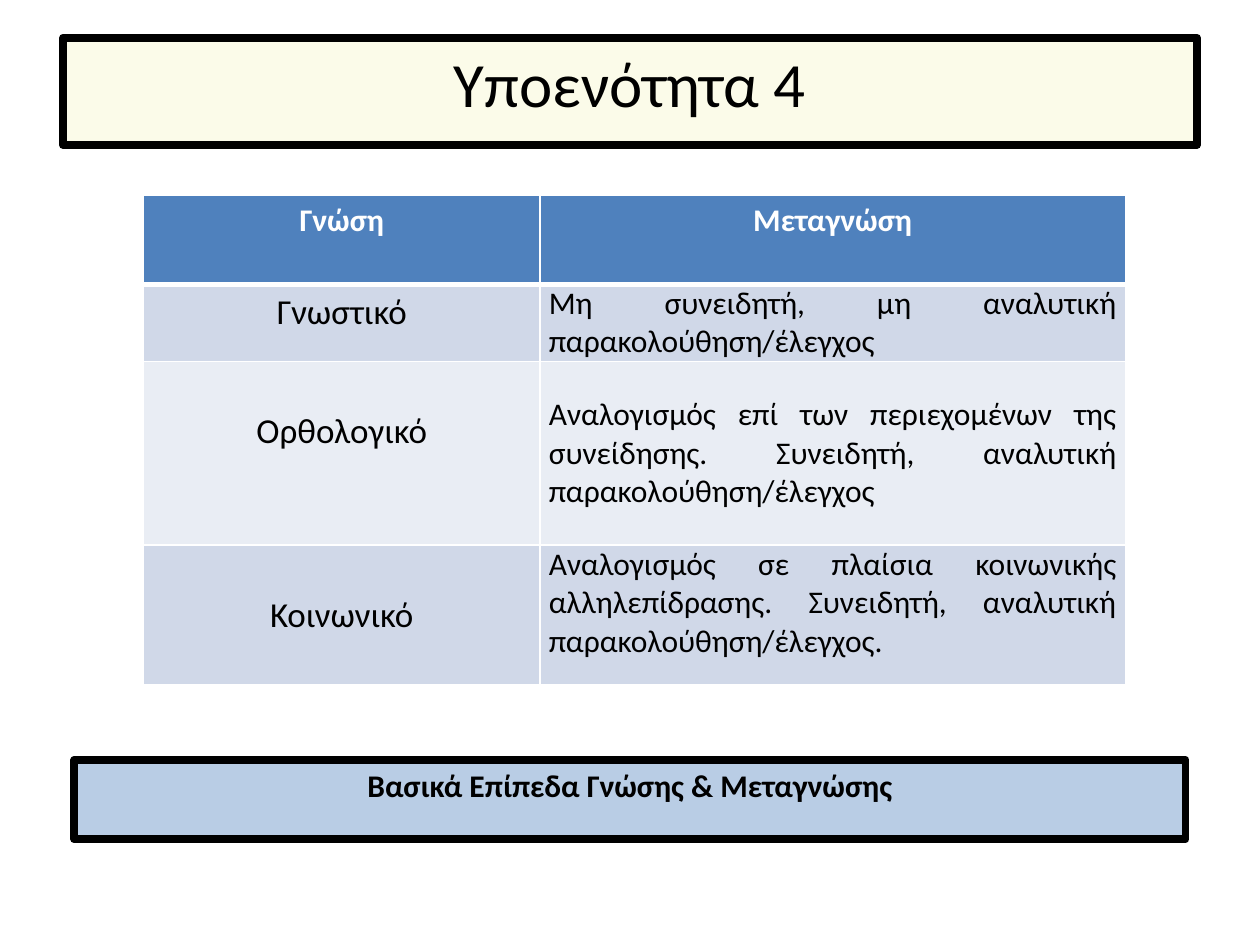
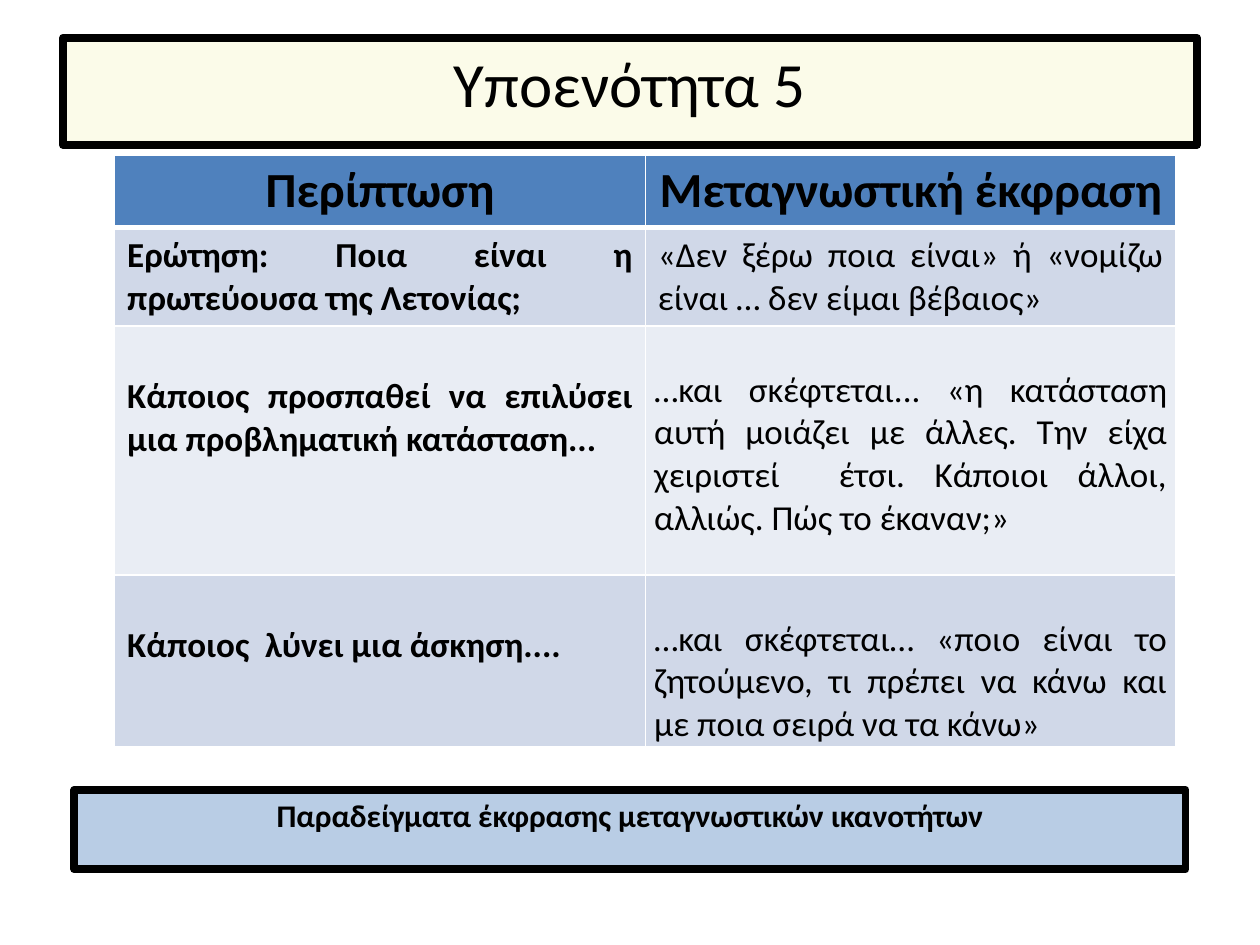
import pptx
import pptx.dml.color
import pptx.enum.shapes
import pptx.enum.text
import pptx.oxml.ns
import pptx.util
from lxml import etree

Pt = pptx.util.Pt
ALIGN = pptx.enum.text.PP_ALIGN

COLORS = {
    "ink": "000000",
    "white": "FFFFFF",
    "title_band": "FBFBE9",
    "caption_band": "B9CDE5",
    "header": "4F81BD",
    "odd_row": "D0D8E8",
    "even_row": "E9EDF4",
}
FONT = "Calibri"
SIDE, EDGE = 7.2, 3.6     # usual text margins
NARROW_SIDE = 5.04        # side margin of the tight cells


def rgb(name):
    return pptx.dml.color.RGBColor.from_string(COLORS[name])


def write(frame, text, size, bold=False, color="ink", align=ALIGN.CENTER):
    frame.word_wrap = True
    paragraph = frame.paragraphs[0]
    paragraph.text = text
    paragraph.alignment = align
    font = paragraph.font
    font.name, font.size, font.bold = FONT, Pt(size), bold
    font.color.rgb = rgb(color)


def add_band(slide, box, fill, text, size, bold=False):
    """Outlined rectangle with centred text at its top."""
    band = slide.shapes.add_shape(
        pptx.enum.shapes.MSO_SHAPE.RECTANGLE, *map(Pt, box))
    band.shadow.inherit = False
    band.fill.solid()
    band.fill.fore_color.rgb = rgb(fill)
    band.line.color.rgb = rgb("ink")
    band.line.width = Pt(4.5)
    band.text_frame.vertical_anchor = pptx.enum.text.MSO_ANCHOR.TOP
    write(band.text_frame, text, size, bold)


def add_title(slide, text):
    add_band(slide, (36, 21.6, 648, 61.2), "title_band", text, 36)


def add_caption(slide, top, text):
    add_band(slide, (42.5, top, 635, 45.4), "caption_band", text, 18, True)


def set_borders(cell, top=1, bottom=1):
    properties = cell._tc.get_or_add_tcPr()
    for side, width in (("L", 1), ("R", 1), ("T", top), ("B", bottom)):
        line = etree.SubElement(
            properties, pptx.oxml.ns.qn(f"a:ln{side}"), w=str(Pt(width)))
        fill = etree.SubElement(line, pptx.oxml.ns.qn("a:solidFill"))
        etree.SubElement(
            fill, pptx.oxml.ns.qn("a:srgbClr"), val=COLORS["white"])


def fill_cell(cell, row, text, margins, **style):
    """Cell with white borders, row colour and (side, top, bottom) margins."""
    set_borders(cell, top=3 if row == 1 else 1, bottom=3 if row == 0 else 1)
    cell.fill.solid()
    band = "header" if row == 0 else "odd_row" if row % 2 else "even_row"
    cell.fill.fore_color.rgb = rgb(band)
    side, cell.margin_top, cell.margin_bottom = map(Pt, margins)
    cell.margin_left = cell.margin_right = side
    write(cell.text_frame, text, **style)


def add_comparison(slide, left, top, widths, heights, headings, heading_style,
                   column_styles, rows):
    """Two-column table; each body cell is (text, margins)."""
    table = slide.shapes.add_table(
        len(heights), len(widths), Pt(left), Pt(top),
        Pt(sum(widths)), Pt(sum(heights))).table
    for column, width in zip(table.columns, widths):
        column.width = Pt(width)
    for row, height in zip(table.rows, heights):
        row.height = Pt(height)
    for c, heading in enumerate(headings):
        fill_cell(table.cell(0, c), 0, heading, (SIDE, EDGE, EDGE),
                  bold=True, **heading_style)
    for r, entries in enumerate(rows, 1):
        for c, (text, margins) in enumerate(entries):
            fill_cell(table.cell(r, c), r, text, margins, **column_styles[c])


def plain(text, drop=0):
    """Body cell with usual margins, its text lowered by drop."""
    return text, (SIDE, EDGE + drop, EDGE)


def tight(text, drop=0):
    """Body cell without top and bottom margins, its text lowered by drop."""
    return text, (NARROW_SIDE, drop, 0)


def build_levels(slide):
    add_comparison(
        slide, 82.1, 111.6, (226.5, 334.5), (51, 43.7, 105, 80),
        ("Γνώση", "Μεταγνώση"), {"size": 18, "color": "white"},
        ({"size": 20}, {"size": 18, "align": ALIGN.JUSTIFY}),
        [
            (plain("Γνωστικό"),
             tight("Μη συνειδητή, μη αναλυτική παρακολούθηση/έλεγχος")),
            (plain("Ορθολογικό", 24.4),
             tight("Αναλογισμός επί των περιεχομένων της συνείδησης. "
                   "Συνειδητή, αναλυτική παρακολούθηση/έλεγχος", 19.5)),
            (plain("Κοινωνικό", 24.4),
             tight("Αναλογισμός σε πλαίσια κοινωνικής αλληλεπίδρασης. "
                   "Συνειδητή, αναλυτική παρακολούθηση/έλεγχος.")),
        ])
    add_title(slide, "Υποενότητα 4")
    add_caption(slide, 434.2, "Βασικά Επίπεδα Γνώσης & Μεταγνώσης")


def build_examples(slide):
    add_comparison(
        slide, 65.5, 88.6, (303.3, 303.3), (41, 56, 142.3, 97.7),
        ("Περίπτωση", "Μεταγνωστική έκφραση"), {"size": 28},
        ({"size": 20, "bold": True, "align": ALIGN.JUSTIFY},
         {"size": 20, "align": ALIGN.JUSTIFY}),
        [
            (plain("Ερώτηση: Ποια είναι η πρωτεύουσα της Λετονίας;"),
             plain("«Δεν ξέρω ποια είναι» ή «νομίζω είναι … "
                   "δεν είμαι βέβαιος»")),
            (plain("Κάποιος προσπαθεί να επιλύσει μια προβληματική "
                   "κατάσταση...", 24.4),
             tight("…και σκέφτεται... «η κατάσταση αυτή μοιάζει με άλλες. "
                   "Την είχα χειριστεί  έτσι. Κάποιοι άλλοι, αλλιώς. "
                   "Πώς το έκαναν;»", 24.4)),
            (plain("Κάποιος  λύνει μια άσκηση....", 24.4),
             tight("…και σκέφτεται… «ποιο είναι το ζητούμενο, τι πρέπει "
                   "να κάνω και με ποια σειρά να τα κάνω»", 24.4)),
        ])
    add_title(slide, "Υποενότητα 5")
    add_caption(slide, 451.4, "Παραδείγματα έκφρασης μεταγνωστικών ικανοτήτων")


def main():
    deck = pptx.Presentation()
    deck.slide_width, deck.slide_height = Pt(720), Pt(540)
    blank = deck.slide_layouts[6]
    for build in (build_levels, build_examples):
        build(deck.slides.add_slide(blank))
    deck.save("out.pptx")


if __name__ == "__main__":
    main()
